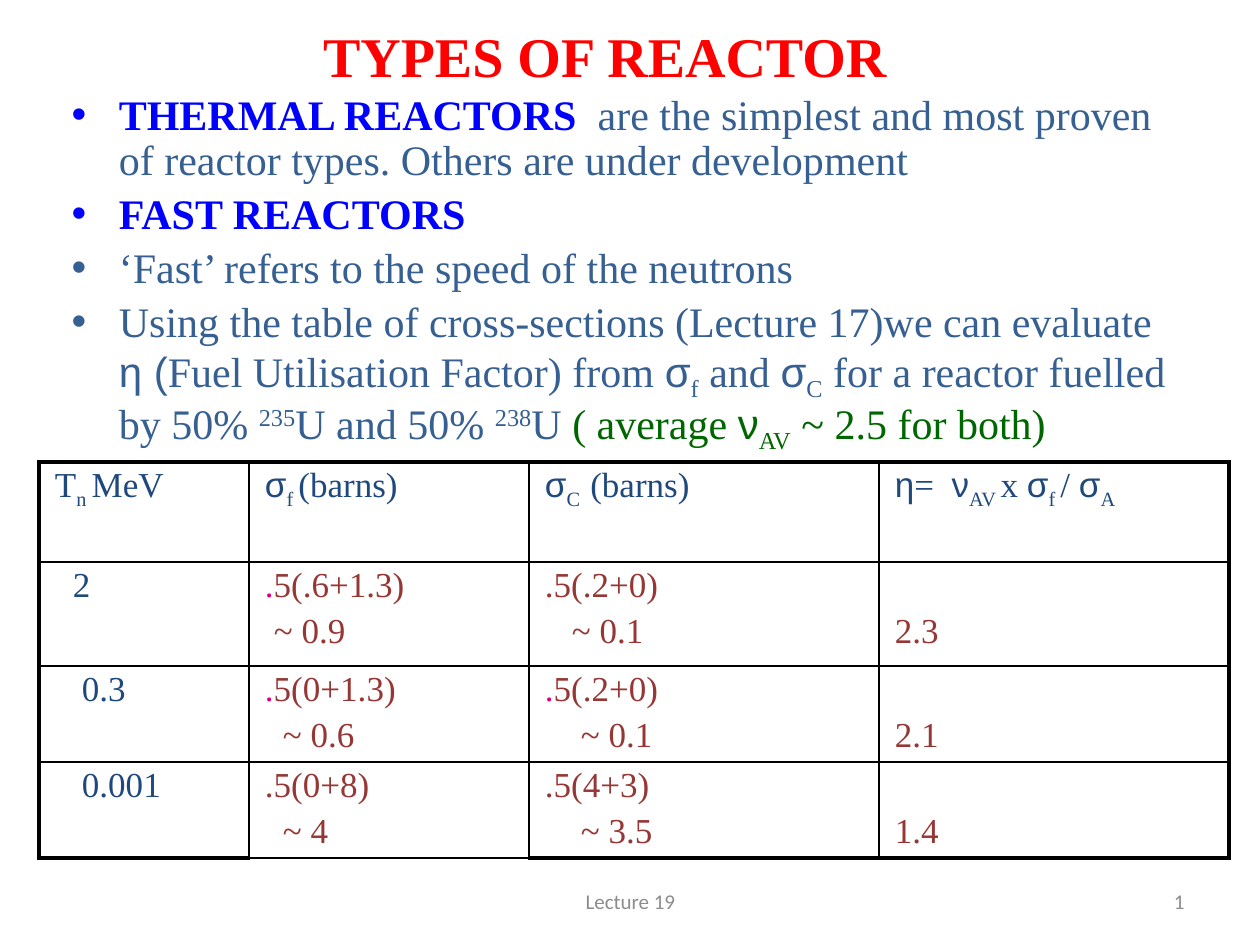
"""Builds the slide on reactor types with its table of fuel utilisation factors."""
from lxml.etree import SubElement
from pptx import Presentation
from pptx.dml.color import RGBColor
from pptx.enum.text import MSO_ANCHOR as Anchor, MSO_AUTO_SIZE as AutoSize, PP_ALIGN as Align
from pptx.oxml.ns import qn
from pptx.util import Pt

THEME = {
    "serif": "Times New Roman", "symbol": "Arial", "footer": "Calibri",
    "title_size": 32, "body_size": 24, "table_size": 20, "footer_size": 12,
    "title": "FF0000", "term": "0000FF", "body": "376092", "note": "006600",
    "label": "1F497D", "value": "953735", "dot": "DC0081",
    "muted": "8C8C8C", "border": "000000", "paper": "FFFFFF",
    "thin": 1, "thick": 2.25,
}
BASELINES = {"sub": "-25000", "sup": "30000"}
GREEK = "ησν"

TITLE = "TYPES OF REACTOR"
BULLETS = [
    [("THERMAL REACTORS  ", "term"),
     "are the simplest and most proven of reactor types. Others are under development"],
    [("FAST REACTORS", "term")],
    ["‘Fast’ refers to the speed of the neutrons"],
    ["Using the table of cross-sections (Lecture 17)we can evaluate ", "η (",
     "Fuel Utilisation Factor) from ", "σ", ("f", "sub"), " and ", "σ", ("C", "sub"),
     " for a reactor fuelled by 50% ", ("235", "sup"), "U and 50% ", ("238", "sup"), "U ",
     ("( average ", "note"), ("ν", "note"), ("AV", "note sub"), (" ~ 2.5 for both)", "note")],
]
HEADERS = [
    ["T", ("n ", "sub"), "MeV"],
    ["σ", ("f ", "sub"), "(barns)"],
    ["σ", ("C  ", "sub"), "(barns)"],
    ["η", "=  ", "ν", ("AV ", "sub"), "x ", "σ", ("f ", "sub"), "/ ", "σ", ("A", "sub")],
]
DOT = (".", "dot")
ROWS = [
    [[(2, ["2"])], [(0, [DOT, "5(.6+1.3)"]), (1, ["~ 0.9"])],
     [(0, [".5(.2+0)"]), (3, ["~ 0.1"])], [(0, ["2.3"])]],
    [[(3, ["0.3"])], [(0, [DOT, "5(0+1.3)"]), (2, ["~ 0.6"])],
     [(0, [DOT, "5(.2+0)"]), (4, ["~ 0.1"])], [(0, ["2.1"])]],
    [[(3, ["0.001"])], [(0, [".5(0+8)"]), (2, ["~ 4"])],
     [(0, [".5(4+3)"]), (4, ["~ 3.5"])], [(0, ["1.4"])]],
]
FOOTERS = [("1", (903, 876, 294, 50), Align.RIGHT),
           ("Lecture 19", (431, 876, 399, 50), Align.CENTER)]

TITLE_BOX = (276, 0, 658, 110)
BODY_BOX = (59, 88, 1131, 471)
TABLE_ORIGIN = (39, 462)
COLUMNS = [210, 280, 350, 350]
HEIGHTS = [100, 104, 96, 96]
CELL_INSET, CELL_MARGIN, LINE_PITCH, SPACE_WIDTH = 16, 4, 46, 9
OPEN_CELL = (3, 1)


def px(length):
    return round(length * 914400 / 126)


def place(shape, box):
    shape.left, shape.top, shape.width, shape.height = map(px, box)


def style(run, font, size, color, bold=False):
    run.font.name = font
    run.font.size = Pt(size)
    run.font.bold = bold
    run.font.color.rgb = RGBColor.from_string(color)


def write_runs(paragraph, runs, size, color):
    for item in runs:
        text, kinds = (item, "") if isinstance(item, str) else item
        run = paragraph.add_run()
        run.text = text
        kinds = kinds.split()
        tint = next((THEME[kind] for kind in kinds if kind in THEME), color)
        font = THEME["symbol" if text[0] in GREEK else "serif"]
        style(run, font, size, tint, "term" in kinds)
        for kind in kinds:
            if kind in BASELINES:
                run._r.get_or_add_rPr().set("baseline", BASELINES[kind])


def paragraphs(text_frame, count):
    return [text_frame.paragraphs[0]] + [text_frame.add_paragraph() for _ in range(count - 1)]


def set_borders(cell, thick_sides):
    properties = cell._tc.get_or_add_tcPr()
    for side in "LRTB":
        width = THEME["thick" if side in thick_sides else "thin"]
        line = SubElement(properties, qn(f"a:ln{side}"), w=str(Pt(width)))
        fill = SubElement(line, qn("a:solidFill"))
        SubElement(fill, qn("a:srgbClr"), val=THEME["border"])


def outer_sides(row, column):
    edges = {"L": column == 0, "R": column == len(COLUMNS) - 1, "T": row == 0,
             "B": row == len(HEIGHTS) - 1 and (row, column) != OPEN_CELL}
    return [side for side, is_edge in edges.items() if is_edge]


def add_title(slide):
    title = slide.shapes.title
    place(title, TITLE_BOX)
    title.text_frame.text = TITLE
    title.text_frame.vertical_anchor = Anchor.MIDDLE
    paragraph = title.text_frame.paragraphs[0]
    paragraph.alignment = Align.CENTER
    style(paragraph.runs[0], THEME["serif"], THEME["title_size"], THEME["title"], True)


def add_body(slide):
    body = slide.placeholders[1]
    place(body, BODY_BOX)
    body.fill.solid()
    body.fill.fore_color.rgb = RGBColor.from_string(THEME["paper"])
    body.text_frame.auto_size = AutoSize.NONE
    for paragraph, runs in zip(paragraphs(body.text_frame, len(BULLETS)), BULLETS):
        paragraph.line_spacing = 0.9
        write_runs(paragraph, runs, THEME["body_size"], THEME["body"])


def fill_cell(cell, lines, row, column):
    set_borders(cell, outer_sides(row, column))
    cell.fill.background()
    cell.margin_left = cell.margin_right = px(CELL_INSET)
    is_result = row > 0 and column == len(COLUMNS) - 1
    cell.margin_top = px(CELL_MARGIN + LINE_PITCH * is_result)
    cell.margin_bottom = px(CELL_MARGIN)
    color = THEME["label" if row == 0 or column == 0 else "value"]
    for paragraph, (spaces, runs) in zip(paragraphs(cell.text_frame, len(lines)), lines):
        paragraph.space_before = Pt(THEME["table_size"] * 0.2)
        paragraph._p.get_or_add_pPr().set("marL", str(px(spaces * SPACE_WIDTH)))
        write_runs(paragraph, runs, THEME["table_size"], color)


def add_cross_sections(slide):
    content = [[[(0, runs)] for runs in HEADERS]] + ROWS
    box = (*TABLE_ORIGIN, sum(COLUMNS), sum(HEIGHTS))
    table = slide.shapes.add_table(len(HEIGHTS), len(COLUMNS), *map(px, box)).table
    table.first_row = table.horz_banding = False
    for column, width in zip(table.columns, COLUMNS):
        column.width = px(width)
    for row, height in zip(table.rows, HEIGHTS):
        row.height = px(height)
    for row, cells in enumerate(content):
        for column, lines in enumerate(cells):
            fill_cell(table.cell(row, column), lines, row, column)


def add_footers(slide):
    for text, box, alignment in FOOTERS:
        text_frame = slide.shapes.add_textbox(*map(px, box)).text_frame
        text_frame.word_wrap = True
        text_frame.vertical_anchor = Anchor.MIDDLE
        text_frame.text = text
        paragraph = text_frame.paragraphs[0]
        paragraph.alignment = alignment
        style(paragraph.runs[0], THEME["footer"], THEME["footer_size"], THEME["muted"])


def main():
    presentation = Presentation()
    presentation.slide_width, presentation.slide_height = px(1260), px(945)
    slide = presentation.slides.add_slide(presentation.slide_layouts[1])
    add_title(slide)
    add_body(slide)
    add_cross_sections(slide)
    add_footers(slide)
    presentation.save("out.pptx")


if __name__ == "__main__":
    main()
